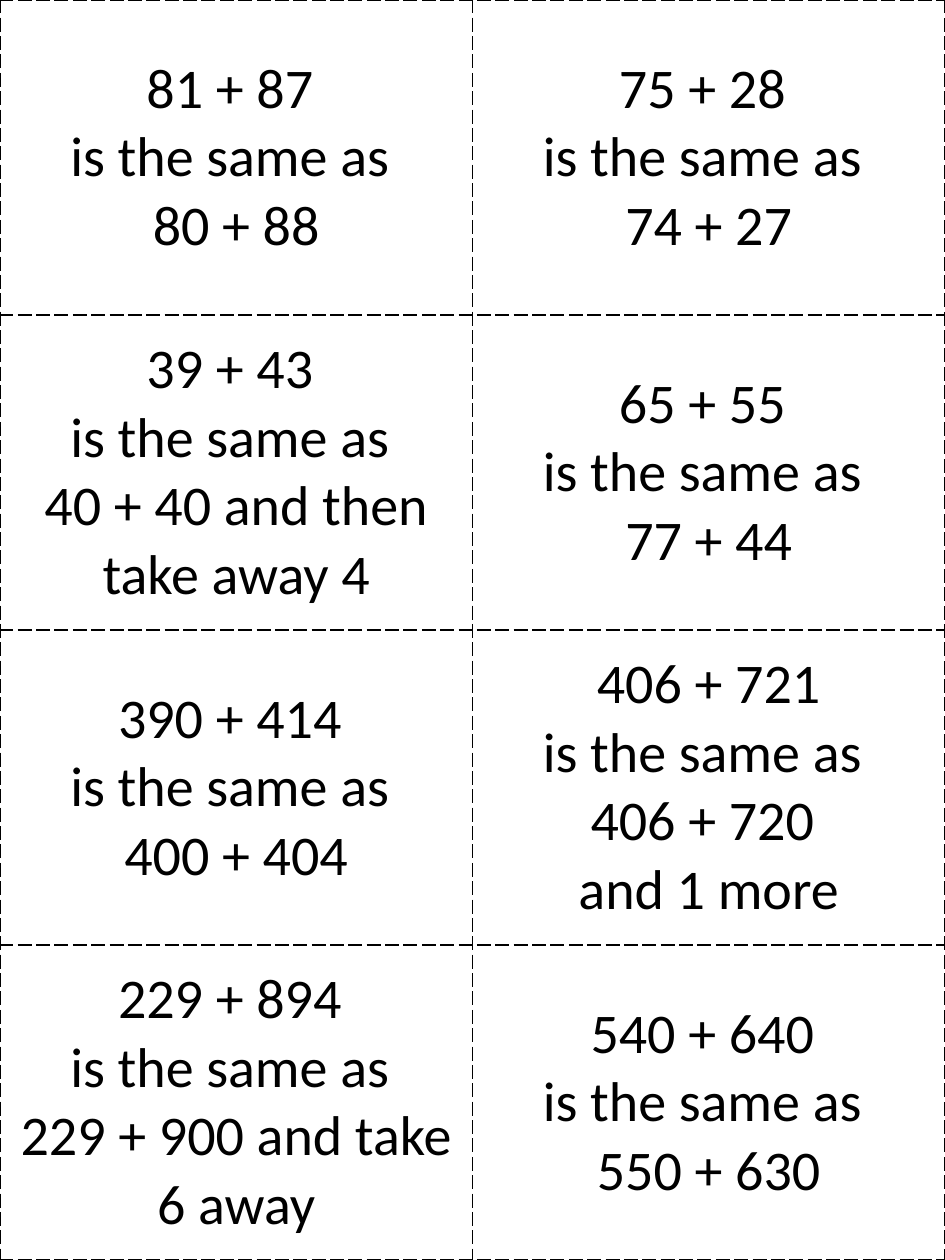
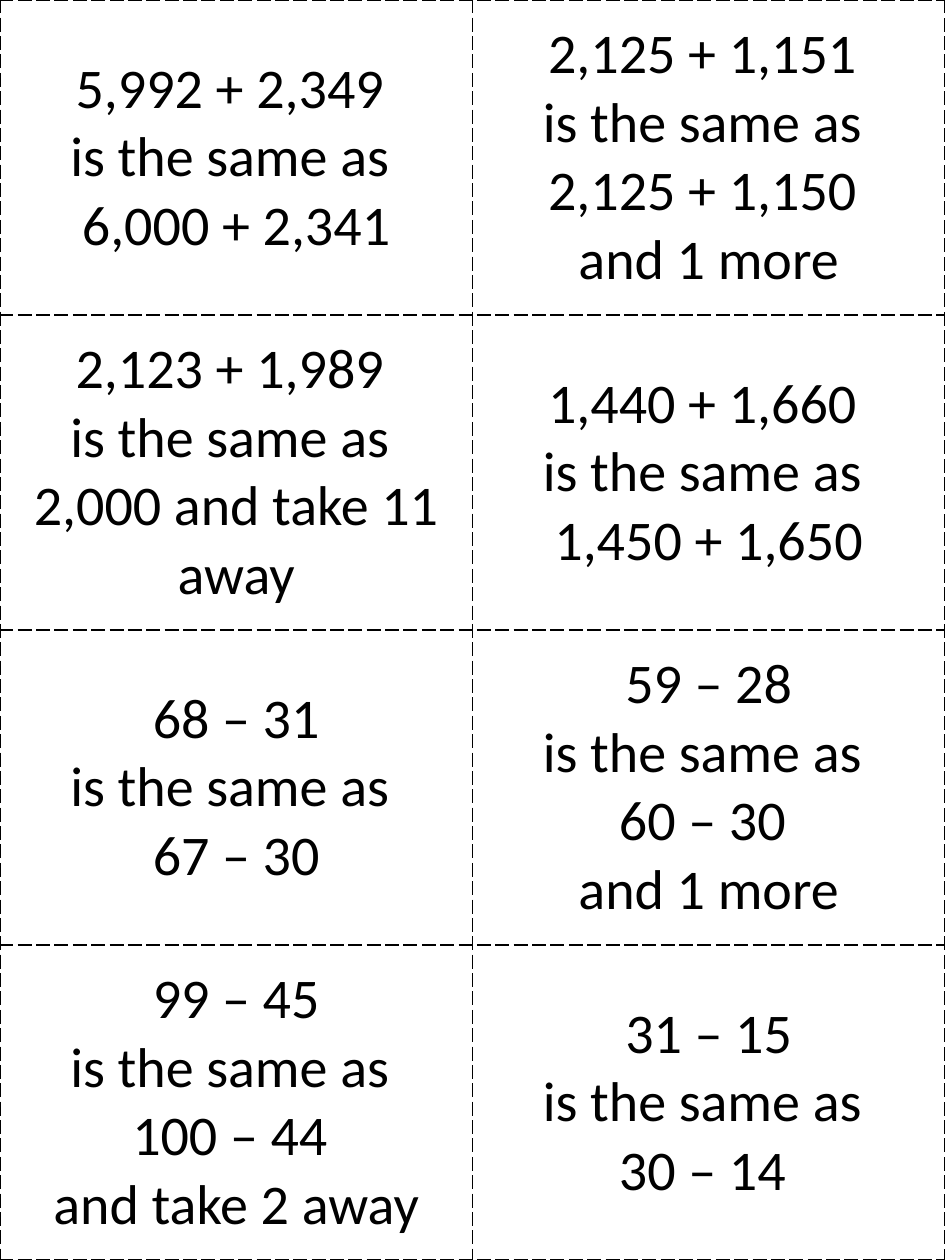
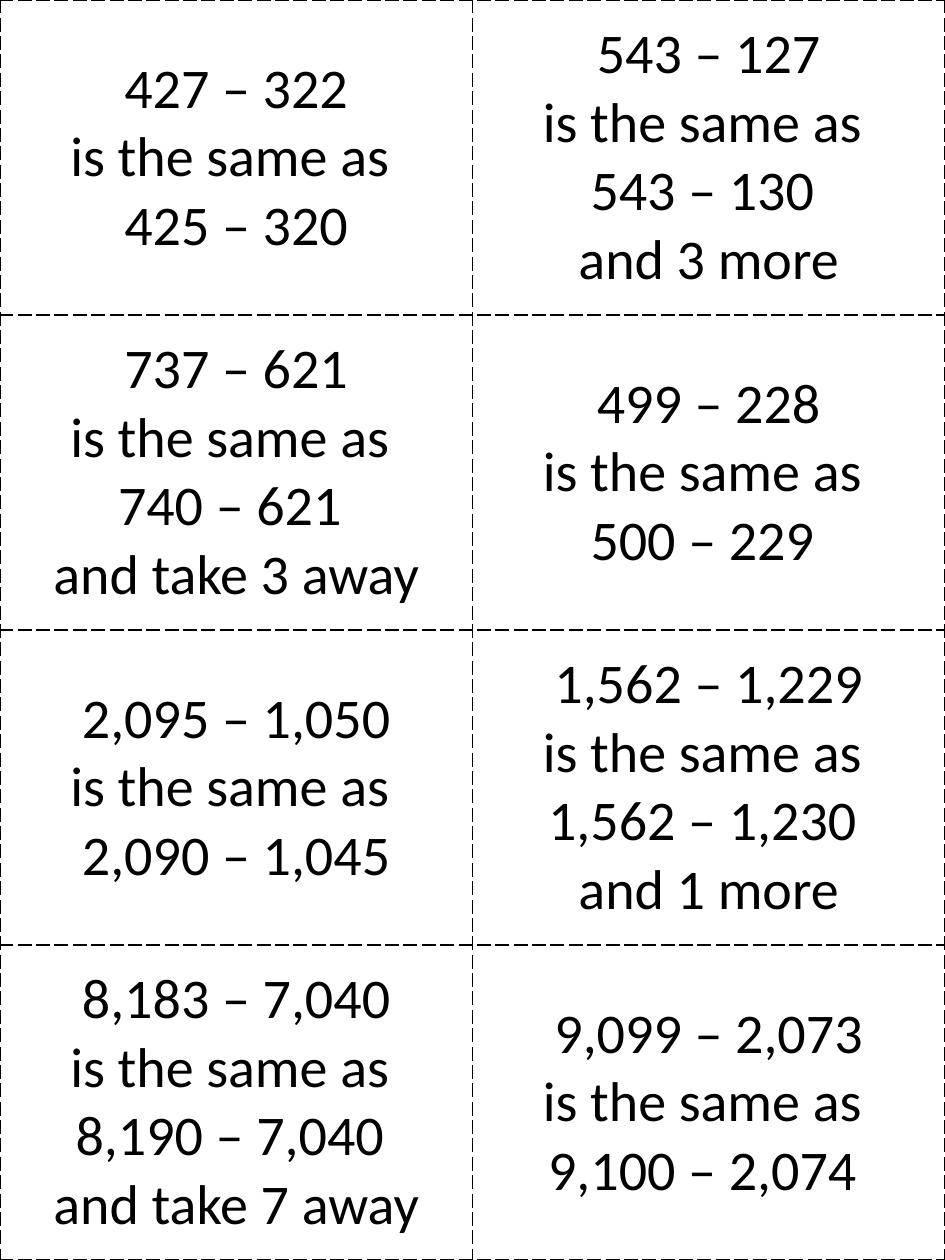
from dataclasses import dataclass

from lxml import etree
from pptx import Presentation
from pptx.dml.color import RGBColor
from pptx.enum.text import MSO_ANCHOR, PP_ALIGN
from pptx.oxml.ns import qn
from pptx.util import Inches, Pt

MIDDLE = MSO_ANCHOR.MIDDLE
CENTER = PP_ALIGN.CENTER


@dataclass(frozen=True)
class Theme:
    ink: str = "000000"
    font: str = "Calibri"
    text_size: int = 32
    border_width: int = 1
    border_dash: str = "lgDash"


THEME = Theme()
WIDTH, HEIGHT = 7.5, 10
ROWS, COLUMNS = 4, 2
SAME = "is the same as "

# Each card: the calculation, then the lines that follow SAME.
# Trailing spaces are part of the wording and shift the centred lines.
PAGES = [
    [
        ("81 + 87 ", "80 + 88"),
        ("75 + 28 ", "74 + 27"),
        ("39 + 43 ", "40 + 40 and then take away 4"),
        ("65 + 55 ", "77 + 44"),
        ("390 + 414 ", "400 + 404"),
        ("406 + 721", "406 + 720 ", "and 1 more"),
        ("229 + 894 ", "229 + 900 and take 6 away"),
        ("540 + 640 ", "550 + 630"),
    ],
    [
        ("5,992 + 2,349 ", "6,000 + 2,341"),
        ("2,125 + 1,151 ", "2,125 + 1,150 ", "and 1 more"),
        ("2,123 + 1,989 ", "2,000 and take 11 away"),
        ("1,440 + 1,660 ", "1,450 + 1,650"),
        ("68 – 31", "67 – 30"),
        ("59 – 28", "60 – 30 ", "and 1 more"),
        ("99 – 45", "100 – 44 ", "and take 2 away"),
        ("31 – 15", "30 – 14 "),
    ],
    [
        ("427 – 322", "425 – 320"),
        ("543 – 127", "543 – 130 ", "and 3 more"),
        ("737 – 621", "740 – 621 ", "and take 3 away"),
        ("499 – 228", "500 – 229 "),
        ("2,095 – 1,050", "2,090 – 1,045"),
        ("1,562 – 1,229", "1,562 – 1,230 ", "and 1 more"),
        ("8,183 – 7,040", "8,190 – 7,040 ", "and take 7 away"),
        ("9,099 – 2,073", "9,100 – 2,074 "),
    ],
]


def add_cut_lines(cell):
    """Give the cell a dashed border on all four sides."""
    properties = cell._tc.get_or_add_tcPr()
    for position, side in enumerate(("a:lnL", "a:lnR", "a:lnT", "a:lnB")):
        line = etree.Element(qn(side), w=str(Pt(THEME.border_width)))
        fill = etree.SubElement(line, qn("a:solidFill"))
        etree.SubElement(fill, qn("a:srgbClr"), val=THEME.ink)
        etree.SubElement(line, qn("a:prstDash"), val=THEME.border_dash)
        properties.insert(position, line)  # borders come before the fill


def write_card(cell, lines):
    cell.vertical_anchor = MIDDLE
    cell.text = "\n".join(lines)
    for paragraph in cell.text_frame.paragraphs:
        paragraph.alignment = CENTER
        paragraph.font.name = THEME.font
        paragraph.font.size = Pt(THEME.text_size)
        paragraph.font.color.rgb = RGBColor.from_string(THEME.ink)


presentation = Presentation()
presentation.slide_width = Inches(WIDTH)
presentation.slide_height = Inches(HEIGHT)
blank_layout = presentation.slide_layouts[6]

for cards in PAGES:
    slide = presentation.slides.add_slide(blank_layout)
    table = slide.shapes.add_table(
        ROWS, COLUMNS, 0, 0, Inches(WIDTH), Inches(HEIGHT)
    ).table
    table.first_row = False
    table.horz_banding = False
    for cell, (calculation, *answer) in zip(table.iter_cells(), cards):
        cell.fill.background()
        add_cut_lines(cell)
        write_card(cell, [calculation, SAME, *answer])

presentation.save("out.pptx")
